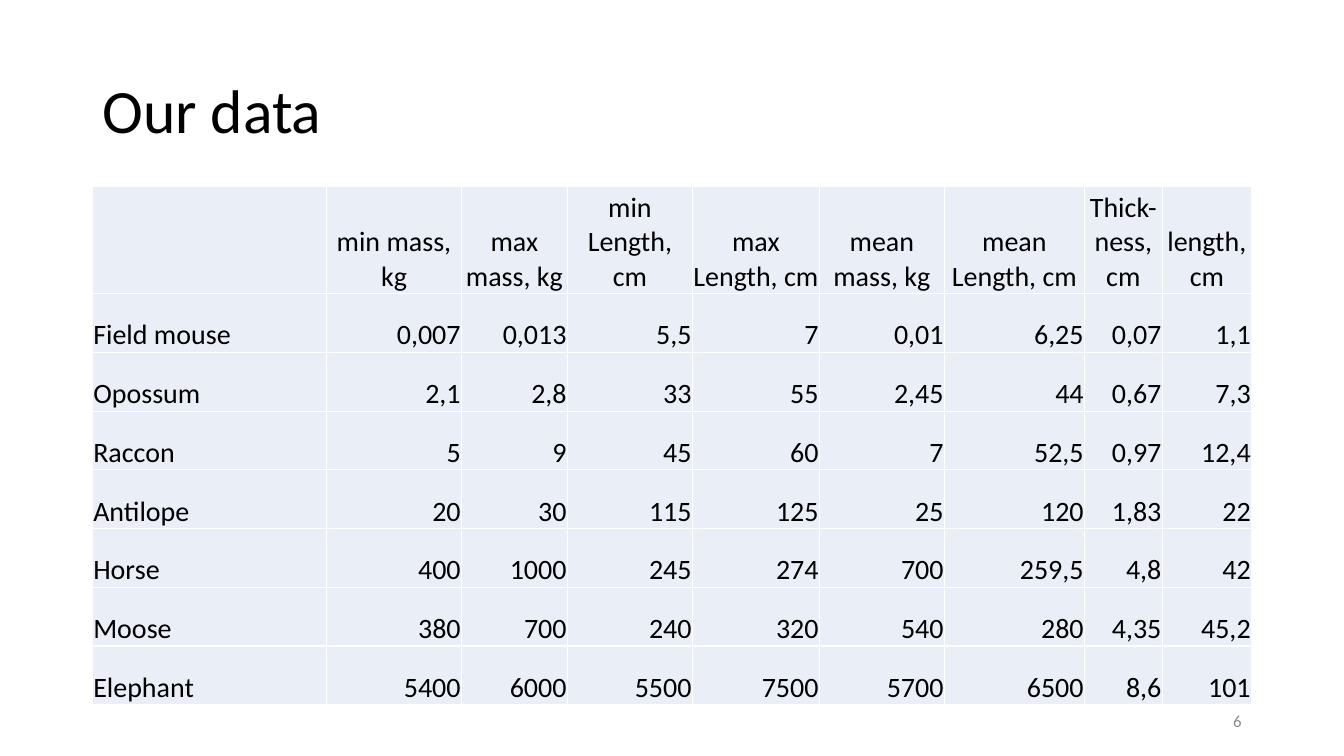
from lxml.etree import SubElement
from pptx import Presentation
from pptx.dml.color import RGBColor
from pptx.enum.text import MSO_ANCHOR, PP_ALIGN
from pptx.oxml.ns import qn
from pptx.util import Cm, Pt

BLACK = RGBColor(0x00, 0x00, 0x00)
GREY = RGBColor(0x8C, 0x8C, 0x8C)
PALE_BLUE = RGBColor(0xEA, 0xEF, 0xF7)
WHITE = RGBColor(0xFF, 0xFF, 0xFF)
FONT = "Calibri"

COLUMN_WIDTHS = [5.9, 3.4, 2.67, 3.15, 3.2, 3.15, 3.53, 1.96, 2.25]
HEADER_HEIGHT, ANIMAL_HEIGHT = 2.7, 1.48

HEADINGS = ["", "min mass, kg", "max mass, kg", "min Length, cm", "max Length, cm",
            "mean mass, kg", "mean Length, cm", "Thick-ness, cm", "length, cm"]
ANIMALS = [
    ["Field mouse", "0,007", "0,013", "5,5", "7", "0,01", "6,25", "0,07", "1,1"],
    ["Opossum", "2,1", "2,8", "33", "55", "2,45", "44", "0,67", "7,3"],
    ["Raccon", "5", "9", "45", "60", "7", "52,5", "0,97", "12,4"],
    ["Antilope", "20", "30", "115", "125", "25", "120", "1,83", "22"],
    ["Horse", "400", "1000", "245", "274", "700", "259,5", "4,8", "42"],
    ["Moose", "380", "700", "240", "320", "540", "280", "4,35", "45,2"],
    ["Elephant", "5400", "6000", "5500", "7500", "5700", "6500", "8,6", "101"],
]


def write_text(frame, text, size=20, color=BLACK, align=PP_ALIGN.LEFT, spacing=None):
    """Put one formatted paragraph into a text frame."""
    frame.word_wrap = True
    paragraph = frame.paragraphs[0]
    paragraph.alignment = align
    paragraph.line_spacing = spacing
    run = paragraph.add_run()
    run.text = text
    run.font.name = FONT
    run.font.size = Pt(size)
    run.font.color.rgb = color


def add_label(slide, text, left, top, width, height, **text_format):
    """Add a text box with vertically centred text."""
    frame = slide.shapes.add_textbox(Cm(left), Cm(top), Cm(width), Cm(height)).text_frame
    frame.vertical_anchor = MSO_ANCHOR.MIDDLE
    write_text(frame, text, **text_format)


def style_cell(cell):
    """Give a cell its margins, white borders and fill."""
    cell.margin_left = cell.margin_right = cell.margin_top = Cm(0.02)
    cell.margin_bottom = Cm(0)
    cell.vertical_anchor = MSO_ANCHOR.BOTTOM
    properties = cell._tc.get_or_add_tcPr()
    for side in ("a:lnL", "a:lnR", "a:lnT", "a:lnB"):
        border = SubElement(properties, qn(side), w=str(Pt(1)))
        border_fill = SubElement(border, qn("a:solidFill"))
        SubElement(border_fill, qn("a:srgbClr"), val=str(WHITE))
    cell.fill.solid()
    cell.fill.fore_color.rgb = PALE_BLUE


def cell_alignment(row, column):
    if row == 0:
        return PP_ALIGN.CENTER
    return PP_ALIGN.LEFT if column == 0 else PP_ALIGN.RIGHT


def add_data_table(slide, rows, left, top):
    row_heights = [HEADER_HEIGHT] + [ANIMAL_HEIGHT] * (len(rows) - 1)
    table = slide.shapes.add_table(
        len(rows), len(COLUMN_WIDTHS), Cm(left), Cm(top),
        Cm(sum(COLUMN_WIDTHS)), Cm(sum(row_heights))).table
    table.first_row = False
    table.horz_banding = False
    for column, width in zip(table.columns, COLUMN_WIDTHS):
        column.width = Cm(width)
    for row, height in zip(table.rows, row_heights):
        row.height = Cm(height)
    for r, values in enumerate(rows):
        for c, value in enumerate(values):
            cell = table.cell(r, c)
            style_cell(cell)
            if value:
                write_text(cell.text_frame, value, align=cell_alignment(r, c))


def main():
    deck = Presentation()
    deck.slide_width, deck.slide_height = Cm(33.87), Cm(19.05)
    slide = deck.slides.add_slide(deck.slide_layouts[6])

    # Title
    add_label(slide, "Our data", 2.33, 1.01, 29.21, 3.68, size=44, spacing=0.9)
    # Animal measurements
    add_data_table(slide, [HEADINGS] + ANIMALS, 2.33, 4.7)
    # Slide number
    add_label(slide, "6", 23.92, 17.66, 7.62, 1.01, size=12, color=GREY,
              align=PP_ALIGN.RIGHT)

    deck.save("out.pptx")


if __name__ == "__main__":
    main()
